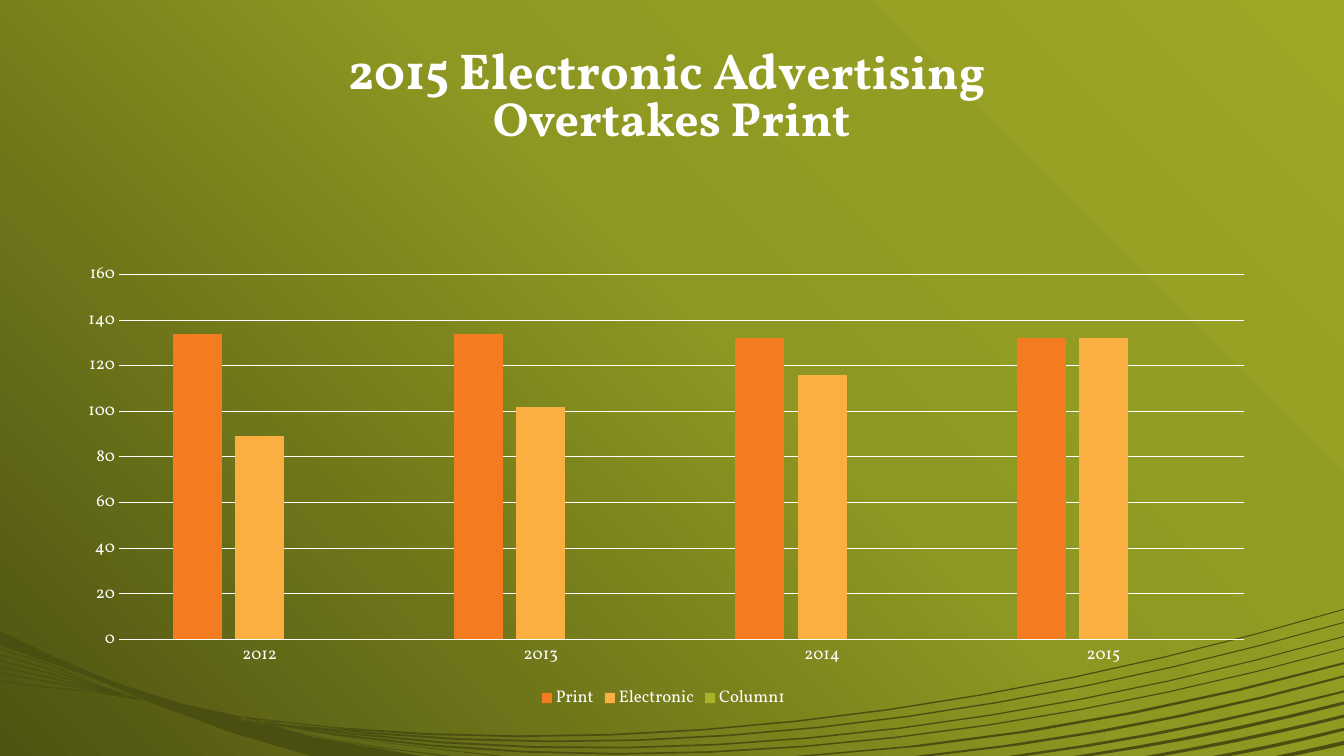
import pptx
import pptx.chart.data
import pptx.dml.color
import pptx.enum.chart
import pptx.enum.text
import pptx.oxml
import pptx.oxml.ns
import pptx.util
from pptx.util import Inches

FONT = "Vollkorn"
WHITE = "FFFFFF"
STRAND_COLOR = "4A4E11"
WIDTH, HEIGHT = 13.33, 7.5
BACKGROUND_STOPS = [(0, "9DA625"), (45, "8E9721"), (100, "4E5312")]

YEARS = ["2012", "2013", "2014", "2015"]
SERIES = [
    ("Print", [134, 134, 132, 132], "F37B20"),
    ("Electronic", [89, 102, 116, 132], "FAAF40"),
    ("Column1", [None] * 4, "A8B228"),
]

# Four points of each long curve, from the right edge to the lower left
LONG_CURVES = [
    [(WIDTH, 6.04), (9.8, 7.08), (6, 7.6), (2.4, 7.11)],
    [(WIDTH, 6.17), (9.99, 7.13), (6.31, 7.65), (2.76, 7.16)],
    [(WIDTH, 6.31), (9.93, 7.27), (6.18, 7.75), (2.58, 7.14)],
    [(WIDTH, 6.43), (9.89, 7.38), (6.08, 7.83), (2.45, 7.13)],
]
# Right-edge height, two control points, end on the bottom edge, thickness
RIGHT_STRANDS = [
    (6.57, (11.59, 7.04), (9.75, 7.38), 7.89, 0.02),
    (6.7, (11.97, 7.07), (10.54, 7.35), 9.07, 0.02),
    (6.85, (12.26, 7.12), (11.15, 7.35), 10, 0.02),
    (6.96, (12.43, 7.19), (11.53, 7.37), 10.65, 0.03),
    (7.09, (12.72, 7.24), (12.06, 7.38), 11.36, 0.03),
    (7.22, (12.92, 7.32), (12.48, 7.42), 12.03, 0.03),
    (7.35, (13.12, 7.4), (12.89, 7.45), 12.65, 0.04),
]
LEFT_STRAND_HEIGHTS = [6.43, 6.49, 6.55, 6.61, 6.67, 6.75]
LOWER_STRAND_ENDS = [4.38, 4.9]
LEFT_MASS = [
    (0, 6.26), (0.57, 6.53), (1.17, 6.78), (1.8, 6.98), (2.4, 7.11),
    (3.1, 7.31), (4.18, 7.5), (3.08, 7.5), (2.27, 7.26), (1.47, 6.96),
    (0.88, 6.71), (0, 6.4),
]


def color(hex_string):
    return pptx.dml.color.RGBColor.from_string(hex_string)


def style_font(font, size, bold=False):
    font.name = FONT
    font.size = pptx.util.Pt(size)
    font.bold = bold
    font.color.rgb = color(WHITE)


def paint_background(slide):
    fill = slide.background.fill
    fill.gradient()
    fill.gradient_angle = 225
    stop_list = slide.background._cSld.find(".//" + pptx.oxml.ns.qn("a:gsLst"))
    for stop in list(stop_list):
        stop_list.remove(stop)
    namespace = pptx.oxml.ns.nsdecls("a")
    for position, hex_string in BACKGROUND_STOPS:
        stop_list.append(pptx.oxml.parse_xml(
            f'<a:gs {namespace} pos="{position * 1000}">'
            f'<a:srgbClr val="{hex_string}"/></a:gs>'))


def bezier(points, steps):
    """Points along a cubic curve."""
    curve = []
    for step in range(steps + 1):
        t = step / steps
        weights = [(1 - t) ** 3, 3 * t * (1 - t) ** 2, 3 * t * t * (1 - t), t ** 3]
        curve.append(tuple(
            sum(weight * point[axis] for weight, point in zip(weights, points))
            for axis in (0, 1)))
    return curve


def band(points, start_drop, end_drop=0, end_shift=0, steps=5):
    """Outline between a curve and the same curve moved at its two ends."""
    lower = []
    for index, (x, y) in enumerate(points):
        share = index / 3
        lower.append((x + share * end_shift,
                      y + (1 - share) * start_drop + share * end_drop))
    return bezier(points, steps) + bezier(lower, steps)[::-1]


def add_swoosh(slide, left, top):
    outlines = [LEFT_MASS]
    # Long curves across the slide
    outlines += [band(points, 0.01, 0.02, steps=12) for points in LONG_CURVES]
    # Strands rising to the right edge
    for height, first, second, end, thickness in RIGHT_STRANDS:
        points = [(WIDTH, height), first, second, (end, HEIGHT)]
        outlines.append(band(points, thickness, end_shift=0.17))
    # Thin strands fanning out to the left edge
    for height in LEFT_STRAND_HEIGHTS:
        points = [(0, height), (0.45, height + 0.09), (0.9, 6.82), (1.4, 6.94)]
        outlines.append(band(points, 0.01, 0.01, steps=3))
    # Strands leaving through the bottom edge
    for end in LOWER_STRAND_ENDS:
        points = [(2.2, 7.09), (2.95, 7.28), (end - 0.8, 7.41), (end, HEIGHT)]
        outlines.append(band(points, 0.01, end_shift=0.1, steps=4))

    # One shape holds every outline
    builder = None
    for outline in outlines:
        corners = [(Inches(left + x), Inches(top + y)) for x, y in outline]
        if builder is None:
            builder = slide.shapes.build_freeform(*corners[0])
        else:
            builder.move_to(*corners[0])
        builder.add_line_segments(corners[1:], close=True)
    swoosh = builder.convert_to_shape()
    swoosh.shadow.inherit = False
    swoosh.fill.solid()
    swoosh.fill.fore_color.rgb = color(STRAND_COLOR)
    swoosh.line.fill.background()


def add_title(slide, left, top, width, height):
    title = slide.shapes.title
    title.left, title.top = Inches(left), Inches(top)
    title.width, title.height = Inches(width), Inches(height)
    frame = title.text_frame
    frame.word_wrap = True
    frame.auto_size = pptx.enum.text.MSO_AUTO_SIZE.TEXT_TO_FIT_SHAPE
    frame.vertical_anchor = pptx.enum.text.MSO_ANCHOR.BOTTOM
    paragraph = frame.paragraphs[0]
    paragraph.alignment = pptx.enum.text.PP_ALIGN.CENTER
    paragraph.line_spacing = 0.9
    for text, size in [("2015 Electronic Adv", 36), ("ertising ", 34.2),
                       ("Overtakes Print", 34.2)]:
        if text.startswith("Overtakes"):
            paragraph.add_line_break()
        run = paragraph.add_run()
        run.text = text
        style_font(run.font, size, bold=True)


def place_plot(chart, left, top, width, height):
    """Fix the inner plot area, as shares of the chart."""
    plot_area = chart._chartSpace.chart.plotArea
    for layout in plot_area.findall(pptx.oxml.ns.qn("c:layout")):
        plot_area.remove(layout)
    places = "".join(f'<c:{name} val="{value}"/>' for name, value in
                     [("x", left), ("y", top), ("w", width), ("h", height)])
    plot_area.insert(0, pptx.oxml.parse_xml(
        f'<c:layout {pptx.oxml.ns.nsdecls("c")}><c:manualLayout>'
        '<c:layoutTarget val="inner"/><c:xMode val="edge"/><c:yMode val="edge"/>'
        f'{places}</c:manualLayout></c:layout>'))


def add_advertising_chart(slide, left, top, width, height):
    data = pptx.chart.data.CategoryChartData()
    data.categories = YEARS
    for name, values, _ in SERIES:
        data.add_series(name, values)
    chart = slide.shapes.add_chart(
        pptx.enum.chart.XL_CHART_TYPE.COLUMN_CLUSTERED,
        Inches(left), Inches(top), Inches(width), Inches(height), data).chart
    chart.has_title = False
    style_font(chart.font, 10)
    place_plot(chart, 0.05, 0.17, 0.93, 0.69)

    # Columns
    plot = chart.plots[0]
    plot.vary_by_categories = False
    plot.gap_width, plot.overlap = 219, -27
    for series, (_, _, hex_string) in zip(plot.series, SERIES):
        series.format.fill.solid()
        series.format.fill.fore_color.rgb = color(hex_string)

    # Axes and gridlines
    value_axis, category_axis = chart.value_axis, chart.category_axis
    for axis in (value_axis, category_axis):
        axis.major_tick_mark = pptx.enum.chart.XL_TICK_MARK.NONE
        style_font(axis.tick_labels.font, 12)
    value_axis.minimum_scale, value_axis.maximum_scale = 0, 160
    value_axis.major_unit = 20
    value_axis.format.line.fill.background()
    for line in (value_axis.major_gridlines.format.line, category_axis.format.line):
        line.color.rgb = color(WHITE)
        line.width = pptx.util.Pt(0.75)

    # Legend
    chart.has_legend = True
    chart.legend.position = pptx.enum.chart.XL_LEGEND_POSITION.BOTTOM
    chart.legend.include_in_layout = False
    style_font(chart.legend.font, 12)


def main():
    presentation = pptx.Presentation()
    presentation.slide_width = Inches(WIDTH)
    presentation.slide_height = Inches(HEIGHT)
    slide = presentation.slides.add_slide(presentation.slide_layouts[5])
    paint_background(slide)
    add_swoosh(slide, 0, 0)
    add_title(slide, 1.66, 0.44, 10, 1.06)
    add_advertising_chart(slide, 0.58, 1.83, 12, 5.25)
    presentation.save("out.pptx")


if __name__ == "__main__":
    main()
